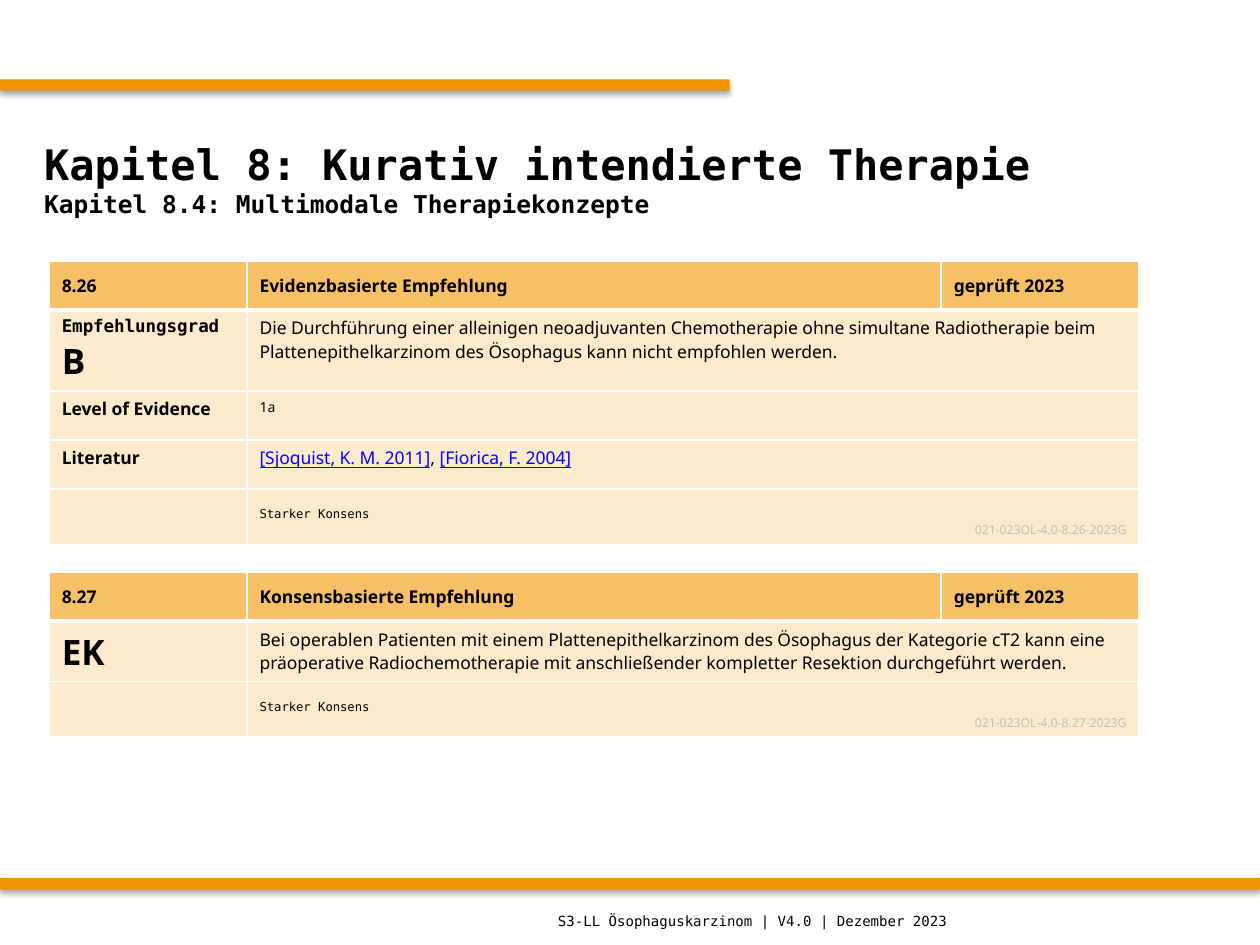
from dataclasses import dataclass

from lxml import etree
from pptx import Presentation
from pptx import util as u
from pptx.dml.color import RGBColor
from pptx.enum import shapes, text
from pptx.oxml import ns

COLS, ROWS = 100, 75
MONO, SANS = "DejaVu Sans Mono", "Noto Sans"
LEFT, RIGHT = text.PP_ALIGN.LEFT, text.PP_ALIGN.RIGHT
TOP, MID, LOW = (text.MSO_ANCHOR.TOP, text.MSO_ANCHOR.MIDDLE,
                 text.MSO_ANCHOR.BOTTOM)


@dataclass(frozen=True)
class Type:
    size: int
    face: str = SANS
    bold: bool = False
    color: str = "000000"
    line: bool = False


class Theme:
    bar, head, body, rule = "F29400", "F7BF66", "FCEACC", "FFFFFF"
    title = Type(24, MONO, True)
    under = Type(14, MONO, True)
    foot = Type(8, MONO)
    label = Type(10, bold=True)
    grade = Type(10, MONO, True)
    mark = Type(20, bold=True)
    plain = Type(10)
    level = Type(8)
    link = Type(10, color="0000FF", line=True)
    vote = Type(7, MONO)
    code = Type(7, color="BFBFBF")


def sub(node, tag, **attrs):
    """Append an XML child and return it."""
    return etree.SubElement(node, ns.qn(tag), attrs)


class Deck:
    def __init__(self, theme):
        self.theme = theme
        self.show = Presentation()
        self.show.slide_width, self.show.slide_height = u.Inches(10), u.Inches(7.5)
        self.slide = self.show.slides.add_slide(self.show.slide_layouts[5])

    def col(self, n):
        return u.Emu(round(self.show.slide_width * n / COLS))

    def row(self, n):
        return u.Emu(round(self.show.slide_height * n / ROWS))

    def box(self, x, y, w, h):
        return self.col(x), self.row(y), self.col(w), self.row(h)

    def put(self, frame, paras, aligns=()):
        """Fill a frame; each paragraph is a list of (words, type) runs."""
        for i, runs in enumerate(paras):
            para = frame.add_paragraph() if i else frame.paragraphs[0]
            para.alignment = aligns[i] if aligns else LEFT
            for words, kind in runs:
                run = para.add_run()
                run.text = words
                font = run.font
                font.size, font.name = u.Pt(kind.size), kind.face
                font.bold, font.underline = kind.bold, kind.line
                font.color.rgb = RGBColor.from_string(kind.color)

    def bar(self, *place):
        bar = self.slide.shapes.add_shape(
            shapes.MSO_SHAPE.RECTANGLE, *self.box(*place))
        bar.fill.solid()
        bar.fill.fore_color.rgb = RGBColor.from_string(self.theme.bar)
        bar.line.fill.background()
        bar.shadow.inherit = False
        glow = bar._element.spPr.find(ns.qn("a:effectLst"))
        shade = sub(glow, "a:outerShdw", blurRad=str(u.Pt(3.1)),
                    dist=str(u.Pt(1.8)), dir="5400000", rotWithShape="0")
        sub(sub(shade, "a:srgbClr", val="000000"), "a:alpha", val="35000")

    def title(self, place, paras):
        head = self.slide.shapes.title
        head.left, head.top, head.width, head.height = self.box(*place)
        head.text_frame.vertical_anchor = MID
        self.put(head.text_frame, paras)

    def label(self, place, paras):
        frame = self.slide.shapes.add_textbox(*self.box(*place)).text_frame
        frame.word_wrap = True
        frame.vertical_anchor = MID
        self.put(frame, paras)

    def edge(self, cell, top, low):
        props = cell._tc.get_or_add_tcPr()
        sides = (("L", 1), ("R", 1), ("T", top), ("B", low))
        for i, (side, width) in enumerate(sides):
            line = etree.Element(ns.qn(f"a:ln{side}"), w=str(u.Pt(width)))
            sub(sub(line, "a:solidFill"), "a:srgbClr", val=self.theme.rule)
            props.insert(i, line)

    def table(self, x, y, cols, rows, head, body):
        """Draw a header of three cells above rows of a label and a wide cell."""
        place = self.box(x, y, sum(cols), sum(rows))
        grid = self.slide.shapes.add_table(len(rows), len(cols), *place).table
        grid.horz_banding = False
        for part, size in zip(grid.columns, cols):
            part.width = self.col(size)
        for part, size in zip(grid.rows, rows):
            part.height = self.row(size)
        for r in range(len(rows)):
            for c in range(len(cols)):
                cell = grid.cell(r, c)
                cell.fill.solid()
                cell.fill.fore_color.rgb = RGBColor.from_string(
                    self.theme.body if r else self.theme.head)
                self.edge(cell, 3 if r == 1 else 1, 1 if r else 3)
        for c, words in enumerate(head):
            cell = grid.cell(0, c)
            cell.vertical_anchor = MID
            self.put(cell.text_frame, [[(words, self.theme.label)]])
        for r, (name, wide, *ends) in enumerate(body, 1):
            cell = grid.cell(r, 1)
            cell.merge(grid.cell(r, 2))
            cell.vertical_anchor = LOW if ends else TOP
            self.put(grid.cell(r, 0).text_frame, name)
            self.put(cell.text_frame, wide, ends)


def vote(code):
    """Closing row: strength of consensus, and the code at the right."""
    return [], [[("Starker Konsens", Theme.vote)], [(code, Theme.code)]], LEFT, RIGHT


def main():
    t = Theme
    deck = Deck(t)
    deck.bar(0, 6.3, 57.9, 0.9)
    deck.bar(0, 69.7, 100, 0.9)
    deck.title((2.5, 8.3, 95, 11.7), [
        [("Kapitel 8: Kurativ intendierte Therapie", t.title)],
        [("Kapitel 8.4: Multimodale Therapiekonzepte", t.under)]])

    cols = (15.7, 55.1, 15.7)
    deck.table(
        3.9, 20.7, cols, (3.9, 6.4, 3.9, 3.9, 4.4),
        ("8.26", "Evidenzbasierte Empfehlung", "geprüft 2023"),
        [([[("Empfehlungsgrad", t.grade)], [("B", t.mark)]],
          [[("Die Durchführung einer alleinigen neoadjuvanten Chemotherapie "
             "ohne simultane Radiotherapie beim Plattenepithelkarzinom des "
             "Ösophagus kann nicht empfohlen werden.", t.plain)]]),
         ([[("Level of Evidence", t.label)]], [[("1a", t.level)]]),
         ([[("Literatur", t.label)]],
          [[("[Sjoquist, K. M. 2011]", t.link), (", ", t.plain),
            ("[Fiorica, F. 2004]", t.link)]]),
         vote("021-023OL-4.0-8.26-2023G")])
    deck.label((43.3, 71.1, 55.1, 3.9), [
        [("S3-LL Ösophaguskarzinom | V4.0 | Dezember 2023", t.foot)]])
    deck.table(
        3.9, 45.4, cols, (3.9, 4.8, 4.4),
        ("8.27", "Konsensbasierte Empfehlung", "geprüft 2023"),
        [([[("EK", t.mark)]],
          [[("Bei operablen Patienten mit einem Plattenepithelkarzinom des "
             "Ösophagus der Kategorie cT2 kann eine präoperative "
             "Radiochemotherapie mit anschließender kompletter Resektion "
             "durchgeführt werden.", t.plain)]]),
         vote("021-023OL-4.0-8.27-2023G")])
    deck.show.save("out.pptx")


if __name__ == "__main__":
    main()
